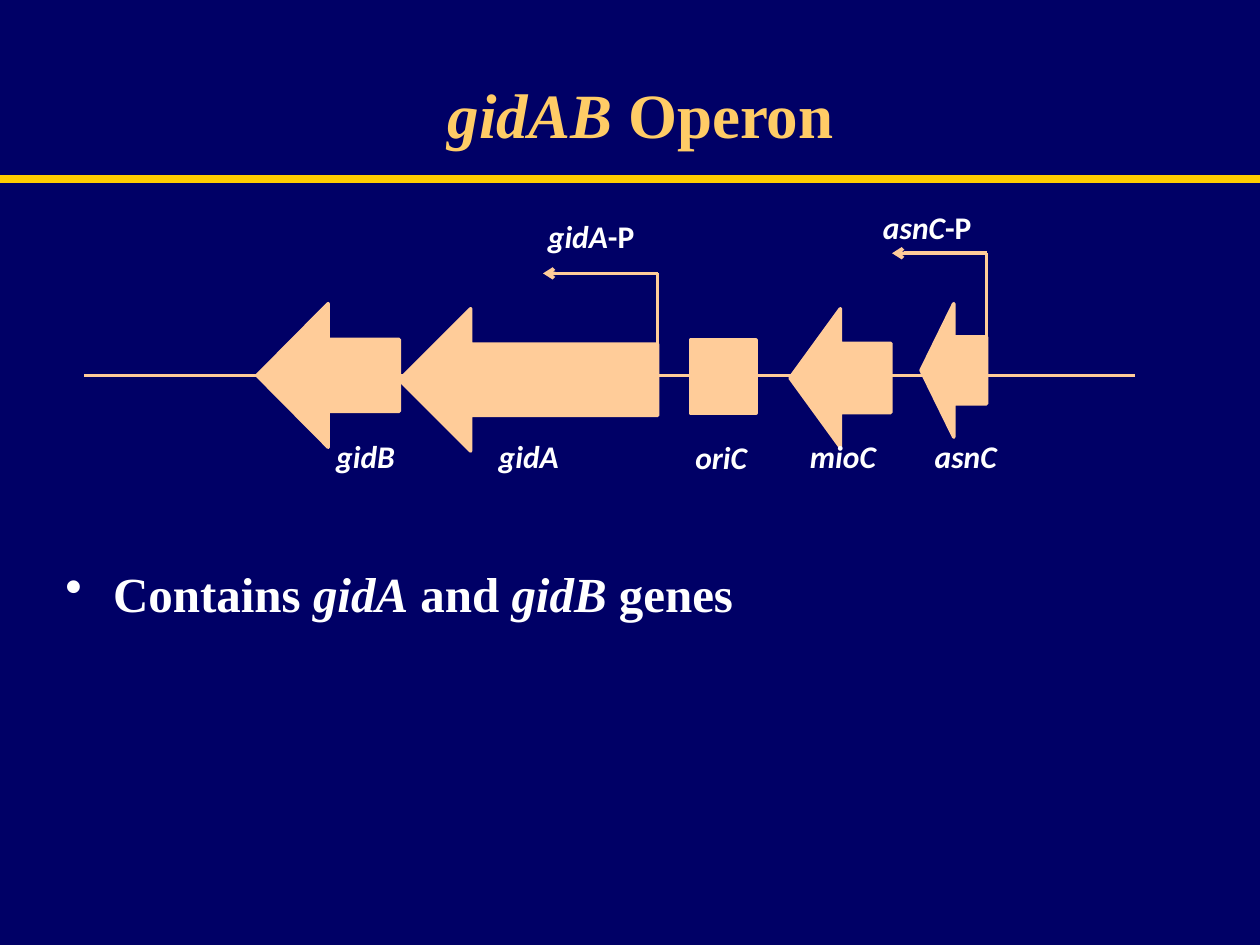
from lxml.etree import SubElement
from pptx import Presentation
from pptx.dml.color import RGBColor
from pptx.enum.shapes import MSO_CONNECTOR, MSO_SHAPE
from pptx.enum.text import MSO_ANCHOR, MSO_AUTO_SIZE, PP_ALIGN
from pptx.oxml.ns import qn
from pptx.util import Inches, Pt

NAVY, GOLD, TITLE_GOLD = "000066", "FFCC00", "FFCC66"
PEACH, WHITE = "FFCC99", "FFFFFF"
SERIF, SANS = "Times New Roman", "Calibri"

# Content: runs are (text, italic)
TITLE = [("gidAB ", True), ("Operon", False)]
BULLET = [("Contains ", False), ("gidA", True), (" and ", False),
          ("gidB", True), (" genes", False)]

# Genes: shape, box, label, label box
GENES = [
    (MSO_SHAPE.LEFT_ARROW, (2.04, 2.41, 1.13, 1.14), "gidB", (2.57, 3.42, 1.02)),
    (MSO_SHAPE.LEFT_ARROW, (3.17, 2.45, 2.05, 1.13), "gidA", (3.86, 3.42, 0.97)),
    (MSO_SHAPE.RECTANGLE, (5.48, 2.7, 0.52, 0.58), "oriC", (5.42, 3.43, 0.99)),
    (MSO_SHAPE.LEFT_ARROW, (6.27, 2.45, 0.8, 1.1), "mioC", (6.33, 3.42, 1)),
    (MSO_SHAPE.LEFT_ARROW, (7.31, 2.41, 0.52, 1.06), "asnC", (7.32, 3.42, 1.15)),
]
# Promoters: gene, stem x, stem bottom, stem top, arrow tip x, label box
PROMOTERS = [
    ("asnC", 7.83, 2.98, 2.01, 7.08, (6.91, 1.6, 1.17)),
    ("gidA", 5.22, 3.05, 2.17, 4.31, (4.25, 1.67, 1.15)),
]
DNA_Y = 2.98
LABEL_HEIGHT = 0.4


def color(hex_code):
    return RGBColor.from_string(hex_code)


def add_runs(paragraph, runs, size, font, hex_code):
    for text, italic in runs:
        run = paragraph.add_run()
        run.text = text
        run.font.size = Pt(size)
        run.font.name = font
        run.font.bold = True
        run.font.italic = italic
        run.font.color.rgb = color(hex_code)


def add_line(shapes, start, end, hex_code, width, arrow=False):
    line = shapes.add_connector(MSO_CONNECTOR.STRAIGHT,
                                *map(Inches, start + end))
    line.line.color.rgb = color(hex_code)
    line.line.width = Pt(width)
    if arrow:
        SubElement(line.line._get_or_add_ln(), qn("a:tailEnd"), type="arrow")
    SubElement(line._element.spPr, qn("a:effectLst"))


def add_label(shapes, box, runs):
    label = shapes.add_textbox(*map(Inches, (*box, LABEL_HEIGHT)))
    frame = label.text_frame
    frame.word_wrap = True
    frame.auto_size = MSO_AUTO_SIZE.SHAPE_TO_FIT_TEXT
    add_runs(frame.paragraphs[0], runs, 18, SANS, WHITE)


prs = Presentation()
prs.slide_width, prs.slide_height = Inches(10), Inches(7.5)
slide = prs.slides.add_slide(prs.slide_layouts[5])
slide.background.fill.solid()
slide.background.fill.fore_color.rgb = color(NAVY)

# Title and rule
add_line(slide.shapes, (0, 1.42), (10, 1.42), GOLD, 4.5)
title = slide.shapes.title
title.left, title.top, title.width, title.height = map(
    Inches, (1.17, 0.3, 7.83, 0.95))
title.text_frame.vertical_anchor = MSO_ANCHOR.BOTTOM
heading = title.text_frame.paragraphs[0]
heading.alignment = PP_ALIGN.CENTER
add_runs(heading, TITLE, 36, SERIF, TITLE_GOLD)

# Bullet
body = slide.shapes.add_textbox(*map(Inches, (0.42, 4.42, 9.17, 1.25)))
body.text_frame.word_wrap = True
point = body.text_frame.paragraphs[0]
point.space_before = Pt(5.6)
add_runs(point, BULLET, 28, SERIF, WHITE)
properties = point._p.get_or_add_pPr()
properties.set("marL", str(Inches(0.38)))
properties.set("indent", str(-Inches(0.38)))
SubElement(properties, qn("a:buChar"), char="•")

# Operon map: DNA strand, genes, promoters, labels
operon = slide.shapes.add_group_shape().shapes
add_line(operon, (0.67, DNA_Y), (9.01, DNA_Y), PEACH, 2)
for preset, box, name, label_box in GENES:
    gene = operon.add_shape(preset, *map(Inches, box))
    gene.shadow.inherit = False
    gene.fill.solid()
    gene.fill.fore_color.rgb = color(PEACH)
    gene.line.color.rgb = color(PEACH)
    gene.line.width = Pt(2)
    add_label(operon, label_box, [(name, True)])
for name, stem_x, bottom, top, tip_x, label_box in PROMOTERS:
    add_line(operon, (stem_x, bottom), (stem_x, top), PEACH, 2)
    add_line(operon, (stem_x, top), (tip_x, top), PEACH, 2, arrow=True)
    add_label(operon, label_box, [(name, True), ("-P", False)])

prs.save("out.pptx")
